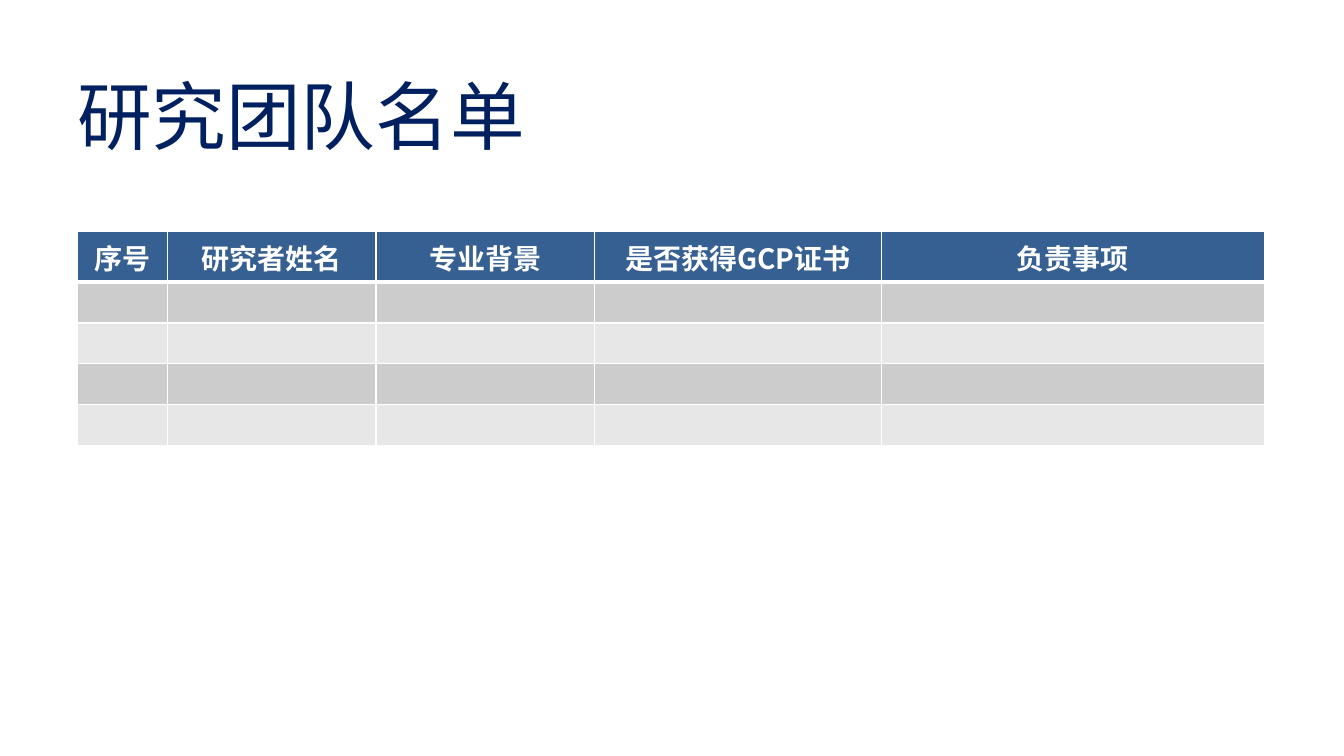
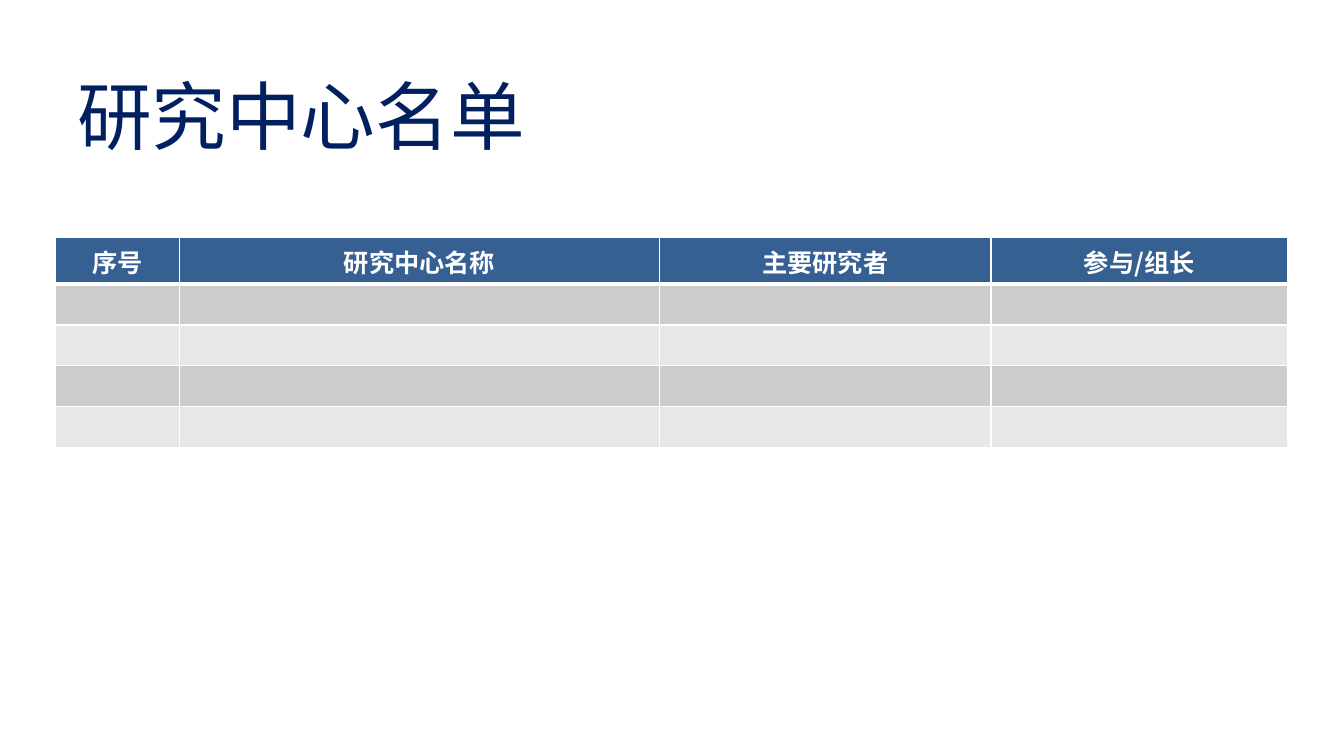
from lxml.etree import SubElement as Sub
from pptx import Presentation as Deck
from pptx.dml.color import RGBColor as RGB
from pptx.enum.text import MSO_ANCHOR as Anchor, PP_ALIGN as Align
from pptx.oxml.ns import qn
from pptx.util import Inches as In, Pt

NAVY = RGB(0x00, 0x20, 0x60)
BLUE = RGB(0x37, 0x60, 0x92)
WHITE = RGB(0xFF, 0xFF, 0xFF)
BANDS = RGB(0xCC, 0xCC, 0xCC), RGB(0xE7, 0xE7, 0xE7)
FONT = "Noto Sans CJK SC"
WIDE, HIGH = 13.33, 7.5
ROWS, ROW_H = 4, 0.405
THIN, THICK = 1, 3


def write(frame, text, size, color, bold=False, align=Align.LEFT):
    par = frame.paragraphs[0]
    par.alignment = align
    run = par.add_run()
    run.text = text
    font = run.font
    font.size, font.bold, font.name = Pt(size), bold, FONT
    font.color.rgb = color
    Sub(font._element, qn("a:ea"), typeface=FONT)


def add_title(slide, text):
    box = slide.shapes.add_textbox(In(WIDE * 0.05), In(0.51), In(WIDE * 0.9), In(1.25))
    frame = box.text_frame
    frame.word_wrap = True
    frame.vertical_anchor = Anchor.MIDDLE
    write(frame, text, 53.3, NAVY)


def paint(cell, color, top=THIN, base=THIN):
    """Give the cell white borders and a fill; borders come first in the XML."""
    props = cell._tc.get_or_add_tcPr()
    for side, width in zip("LRTB", (THIN, THIN, top, base)):
        line = Sub(props, qn(f"a:ln{side}"), w=str(Pt(width)))
        fill = Sub(line, qn("a:solidFill"))
        Sub(fill, qn("a:srgbClr"), val=str(WHITE))
    cell.fill.solid()
    cell.fill.fore_color.rgb = color


def add_list(slide, left, top, cols, head_h, size, anchor):
    """Add a table with a header row and empty banded rows; cols maps heads to widths."""
    shape = slide.shapes.add_table(ROWS + 1, len(cols), In(left), In(top),
                                   In(sum(cols.values())), In(head_h + ROWS * ROW_H))
    table = shape.table
    for row in table.rows:
        row.height = In(ROW_H)
    table.rows[0].height = In(head_h)
    for c, (head, width) in enumerate(cols.items()):
        table.columns[c].width = In(width)
        cell = table.cell(0, c)
        paint(cell, BLUE, base=THICK)
        cell.vertical_anchor = anchor
        write(cell.text_frame, head, size, WHITE, bold=True, align=Align.CENTER)
        for r in range(1, ROWS + 1):
            cell = table.cell(r, c)
            paint(cell, BANDS[(r - 1) % 2], top=THICK if r == 1 else THIN)
            cell.margin_top = cell.margin_bottom = 0


def main():
    deck = Deck()
    deck.slide_width, deck.slide_height = In(WIDE), In(HIGH)
    blank = deck.slide_layouts[6]

    team = deck.slides.add_slide(blank)
    add_title(team, "研究团队名单")
    add_list(team, 0.77, 2.3,
             {"序号": 0.89, "研究者姓名": 2.07, "专业背景": 2.17,
              "是否获得GCP证书": 2.84, "负责事项": 3.8},
             head_h=0.5, size=20, anchor=Anchor.TOP)

    sites = deck.slides.add_slide(blank)
    add_title(sites, "研究中心名单")
    add_list(sites, 0.55, 2.36,
             {"序号": 1.23, "研究中心名称": 4.76, "主要研究者": 3.29, "参与/组长": 2.94},
             head_h=0.46, size=18, anchor=Anchor.MIDDLE)

    deck.save("out.pptx")


if __name__ == "__main__":
    main()
